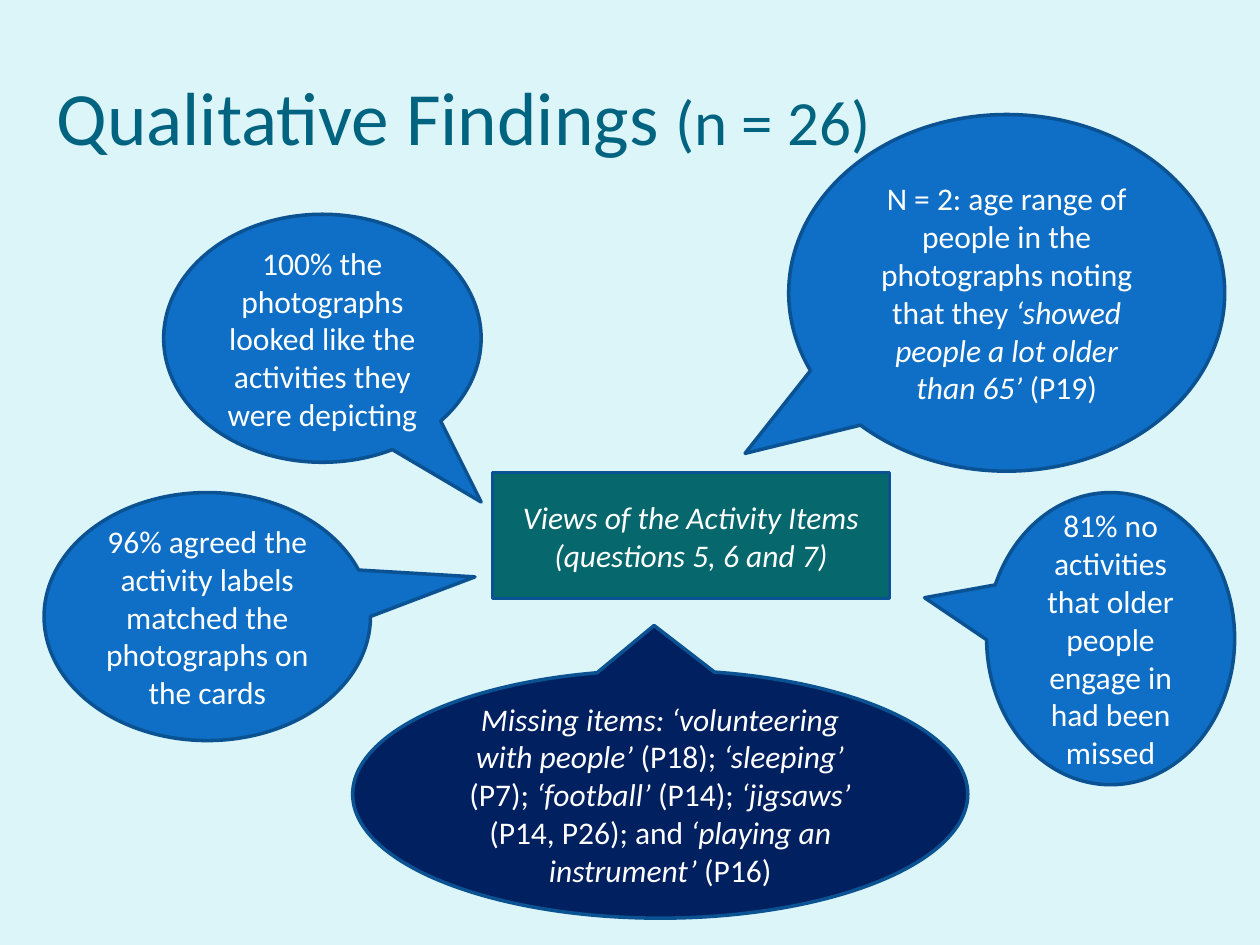
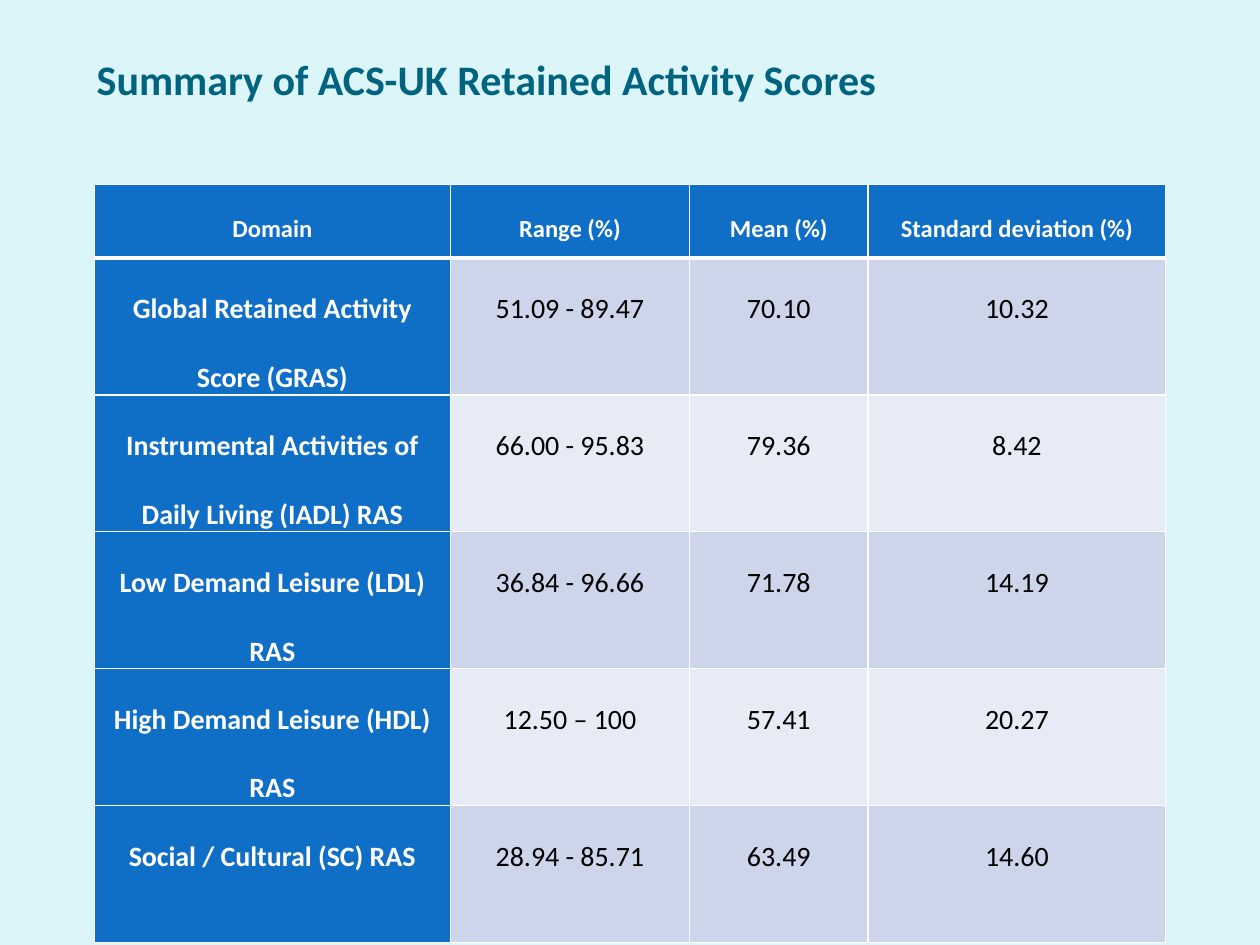
from dataclasses import dataclass

from lxml import etree
from pptx import Presentation
from pptx import util as u
from pptx.dml.color import RGBColor
from pptx.enum import shapes, text
from pptx.oxml.ns import qn


@dataclass(frozen=True)
class Theme:
    font: str = "Calibri"
    background: str = "DBF5F9"
    title: str = "00637F"
    blue: str = "0F6FC6"
    navy: str = "002060"
    teal: str = "06686C"
    outline: str = "0B5292"
    band_dark: str = "CCD5EA"
    band_light: str = "E7EBF5"
    white: str = "FFFFFF"
    black: str = "000000"
    title_size: int = 43
    title_note_size: int = 36
    table_title_size: int = 24
    body_size: int = 18
    cell_size: int = 16
    header_size: int = 14


T = Theme()


def style(p, size, color, bold=False, align=text.PP_ALIGN.CENTER):
    p.alignment = align
    p.font.name, p.font.size, p.font.bold = T.font, u.Pt(size), bold
    p.font.color.rgb = RGBColor.from_string(color)


def add_title(s, box, title, size, bold=False):
    tf = s.shapes.add_textbox(*map(u.Cm, box)).text_frame
    tf.word_wrap = True
    tf.vertical_anchor = text.MSO_ANCHOR.MIDDLE
    p = tf.paragraphs[0]
    p.add_run().text = title
    style(p, size, T.title, bold, text.PP_ALIGN.LEFT)
    return p


prs = Presentation()
prs.slide_width, prs.slide_height = u.Cm(25.4), u.Cm(19.05)
findings, scores = [prs.slides.add_slide(prs.slide_layouts[6]) for _ in range(2)]
for s in (findings, scores):
    s.background.fill.solid()
    s.background.fill.fore_color.rgb = RGBColor.from_string(T.background)

# Slide 1: title with a smaller sample size
p = add_title(findings, (0.89, 0.74, 20.83, 3.18), "Qualitative Findings ", T.title_size)
r = p.add_run()
r.text = "(n = 26)"
r.font.size = u.Pt(T.title_note_size)

# Slide 1: central topic and callouts; asterisks enclose italic text
CALLOUT = shapes.MSO_SHAPE.OVAL_CALLOUT
RECT = shapes.MSO_SHAPE.RECTANGLE
bubbles = [
    (CALLOUT, (3.3, 4.32, 6.4, 5), (0.5, 0.66), T.blue,
     "100% the photographs looked like the activities they were depicting"),
    (CALLOUT, (15.9, 2.31, 8.79, 7.19), (-0.6, 0.45), T.blue,
     "N = 2: age range of people in the photographs noting that they "
     "*‘showed people a lot older than 65’* (P19)"),
    (CALLOUT, (7.11, 13.51, 12.4, 5), (-0.01, -0.68), T.navy,
     "*Missing items: ‘volunteering with people’* (P18); *‘sleeping’* (P7); "
     "*‘football’* (P14); *‘jigsaws’* (P14, P26); and *‘playing an instrument’* (P16)"),
    (RECT, (9.93, 9.53, 8, 2.54), (), T.teal,
     "*Views of the Activity Items (questions 5, 6 and 7)*"),
    (CALLOUT, (0.89, 9.93, 6.58, 5), (0.82, -0.16), T.blue,
     "96% agreed the activity labels matched the photographs on the cards"),
    (CALLOUT, (19.89, 9.93, 5, 5.89), (-0.75, -0.14), T.blue,
     "81% no activities that older people engage in had been missed"),
]
for kind, box, pointer, color, words in bubbles:
    sp = findings.shapes.add_shape(kind, *map(u.Cm, box))
    sp.shadow.inherit = False
    for i, offset in enumerate(pointer):
        sp.adjustments[i] = offset
    sp.fill.solid()
    sp.fill.fore_color.rgb = RGBColor.from_string(color)
    sp.line.color.rgb = RGBColor.from_string(T.outline)
    sp.line.width = u.Pt(2)
    tf = sp.text_frame
    tf.word_wrap = True
    tf.vertical_anchor = text.MSO_ANCHOR.MIDDLE
    p = tf.paragraphs[0]
    style(p, T.body_size, T.white)
    for i, part in enumerate(words.split("*")):
        if part:
            r = p.add_run()
            r.text = part
            r.font.italic = i % 2 == 1

# Slide 2: title
add_title(scores, (1.7, 0, 22.02, 3.18), "Summary of ACS-UK Retained Activity Scores",
          T.table_title_size, bold=True)

# Slide 2: table of scores
rows = [
    ("Domain", "Range (%)", "Mean (%)", "Standard deviation (%)"),
    ("Global Retained Activity Score (GRAS)", "51.09 - 89.47", "70.10", "10.32"),
    ("Instrumental Activities of Daily Living (IADL) RAS", "66.00 - 95.83", "79.36", "8.42"),
    ("Low Demand Leisure (LDL) RAS", "36.84 - 96.66", "71.78", "14.19"),
    ("High Demand Leisure (HDL) RAS", "12.50 – 100", "57.41", "20.27"),
    ("Social / Cultural (SC) RAS", "28.94 - 85.71", "63.49", "14.60"),
]
widths = (7.18, 4.82, 3.6, 6)
header_height, row_height = 1.48, 2.76
table = scores.shapes.add_table(
    len(rows), len(widths), u.Cm(1.9), u.Cm(3.72), u.Cm(sum(widths)),
    u.Cm(header_height + row_height * (len(rows) - 1))).table
for column, width in zip(table.columns, widths):
    column.width = u.Cm(width)

for i, row in enumerate(rows):
    table.rows[i].height = u.Cm(row_height if i else header_height)
    for j, value in enumerate(row):
        cell = table.cell(i, j)
        heading = i == 0 or j == 0
        cell.margin_left = cell.margin_right = u.Cm(0.13)
        cell.margin_top = cell.margin_bottom = 0
        cell.text = value
        p = cell.text_frame.paragraphs[0]
        p.line_spacing = 2.0
        style(p, T.cell_size if i else T.header_size,
              T.white if heading else T.black, bold=heading)

        # White borders, thicker below the header row
        thick = {0: "lnB", 1: "lnT"}.get(i)
        for side in ("lnL", "lnR", "lnT", "lnB"):
            ln = etree.SubElement(cell._tc.get_or_add_tcPr(), qn(f"a:{side}"),
                                  w=str(u.Pt(3 if side == thick else 1)))
            fill = etree.SubElement(ln, qn("a:solidFill"))
            etree.SubElement(fill, qn("a:srgbClr"), val=T.white)
        cell.fill.solid()
        band = T.band_dark if i % 2 else T.band_light
        cell.fill.fore_color.rgb = RGBColor.from_string(T.blue if heading else band)

prs.save("out.pptx")
